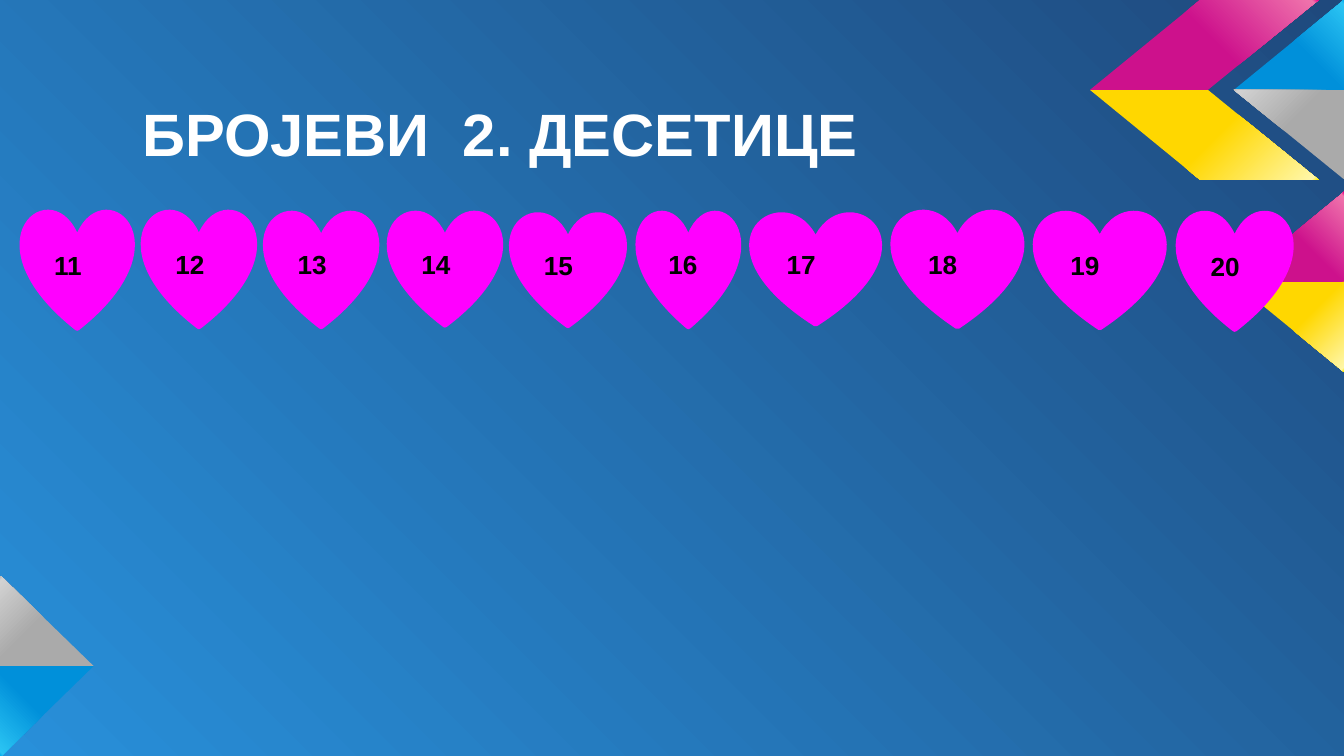
from lxml.etree import SubElement as Sub
from pptx import Presentation
from pptx.dml.color import RGBColor
from pptx.enum.shapes import MSO_SHAPE as Kind
from pptx.enum.text import MSO_ANCHOR as Anchor, PP_ALIGN as Align
from pptx.oxml.ns import qn
from pptx.util import Cm, Pt

WHITE = RGBColor(0xFF, 0xFF, 0xFF)
BLACK = RGBColor(0x00, 0x00, 0x00)
PINK = RGBColor(0xFF, 0x00, 0xFF)
SKY = RGBColor(0x28, 0x90, 0xDA)
NAVY = RGBColor(0x1F, 0x49, 0x7D)

# Base, light and end colour of each ribbon
BLUE = (RGBColor(0x00, 0x90, 0xDA), RGBColor(0x2B, 0xC4, 0xF3), RGBColor(0x00, 0xAE, 0xEE))
GREY = (RGBColor(0xAA, 0xAA, 0xAA), RGBColor(0xD2, 0xD2, 0xD2), RGBColor(0xB9, 0xB9, 0xB9))
ROSE = (RGBColor(0xCD, 0x11, 0x8C), RGBColor(0xF0, 0x74, 0xAC), RGBColor(0xEB, 0x00, 0x8B))
GOLD = (RGBColor(0xFF, 0xD7, 0x00), RGBColor(0xFF, 0xF7, 0xA9), RGBColor(0xFF, 0xF1, 0x00))

WIDE, HIGH = 25.4, 14.29

# Colours, angle, corners in cm
RIBBONS = [
    (BLUE, 135, [(1.77, 12.59), (0, 12.59), (0, HIGH), (0.03, HIGH)]),
    (GREY, 225, [(1.77, 12.59), (0.03, 10.9), (0, 10.9), (0, 12.59)]),
    (BLUE, 315, [(WIDE, 0), (23.32, 1.7), (WIDE, 1.7)]),
    (GREY, 225, [(23.32, 1.7), (WIDE, 3.39), (WIDE, 1.7)]),
    (ROSE, 315, [(22.83, 1.7), (24.92, 0), (22.68, 0), (20.6, 1.7)]),
    (ROSE, 315, [(WIDE, 3.63), (23.32, 5.33), (WIDE, 5.33)]),
    (GOLD, 45, [(23.32, 5.33), (WIDE, 7.03), (WIDE, 5.33)]),
    (GOLD, 45, [(22.83, 1.7), (24.92, 3.4), (22.68, 3.4), (20.6, 1.7)]),
]

# Left, top, width, height in cm, for the numbers from 11 on
HEARTS = [
    (0.43, 3.99, 2.06, 2.21),
    (2.72, 3.99, 2.08, 2.18),
    (5.03, 4.01, 2.08, 2.16),
    (7.37, 4.01, 2.08, 2.13),
    (9.68, 4.04, 2.11, 2.11),
    (12.07, 4.01, 1.88, 2.16),
    (14.22, 4.04, 2.39, 2.08),
    (16.89, 3.99, 2.41, 2.18),
    (19.58, 4.01, 2.41, 2.18),
    (22.28, 4.01, 2.11, 2.21),
]


def blend(props, stops):
    """Swap the solid fill in props for a gradient and return it."""
    old = props.find(qn("a:solidFill"))
    grad = props.makeelement(qn("a:gradFill"), {"rotWithShape": "1"})
    props.replace(old, grad)
    group = Sub(grad, qn("a:gsLst"))
    for place, tone in stops:
        stop = Sub(group, qn("a:gs"), pos=str(place * 1000))
        Sub(stop, qn("a:srgbClr"), val=str(tone))
    return grad


def paint_back(slide):
    fill = slide.background.fill
    fill.solid()
    fill.fore_color.rgb = SKY
    props = slide.element.find(".//" + qn("p:bgPr"))
    grad = blend(props, [(0, SKY), (100, NAVY)])
    way = Sub(grad, qn("a:path"), path="circle")
    Sub(way, qn("a:fillToRect"), t="100000", r="100000")


def add_ribbon(slide, tones, angle, spots):
    first, *rest = [(Cm(x), Cm(y)) for x, y in spots]
    pen = slide.shapes.build_freeform(*first)
    pen.add_line_segments(rest, close=True)
    shape = pen.convert_to_shape()
    shape.shadow.inherit = False
    shape.line.fill.background()
    shape.fill.solid()
    base, light, end = tones
    stops = [(0, base), (54, base), (98, light), (100, end)]
    grad = blend(shape.element.spPr, stops)
    Sub(grad, qn("a:lin"), ang=str(angle * 60000), scaled="0")


def add_text(frame, text, size, tone):
    para = frame.paragraphs[0]
    para.alignment = Align.LEFT
    run = para.add_run()
    run.text = text
    font = run.font
    font.name, font.size, font.bold = "Arial", Pt(size), True
    font.color.rgb = tone


def set_inset(frame, left=0.25, top=0.25):
    frame.margin_left, frame.margin_top = Cm(left), Cm(top)
    frame.margin_right = frame.margin_bottom = Cm(0.25)
    frame.word_wrap = True


def add_title(slide):
    box = slide.shapes.add_textbox(Cm(0.3), Cm(0.41), Cm(24.23), Cm(12.22))
    set_inset(box.text_frame, 2.39, 1.73)
    add_text(box.text_frame, "БРОЈЕВИ  2. ДЕСЕТИЦЕ", 32, WHITE)


def add_heart(slide, number, area):
    heart = slide.shapes.add_shape(Kind.HEART, *map(Cm, area))
    heart.shadow.inherit = False
    heart.fill.solid()
    heart.fill.fore_color.rgb = PINK
    heart.line.color.rgb = PINK
    heart.line.width = Pt(3)
    frame = heart.text_frame
    set_inset(frame)
    frame.vertical_anchor = Anchor.MIDDLE
    add_text(frame, str(number), 14, BLACK)


def main():
    deck = Presentation()
    deck.slide_width, deck.slide_height = Cm(WIDE), Cm(HIGH)
    slide = deck.slides.add_slide(deck.slide_layouts[6])
    paint_back(slide)
    for ribbon in RIBBONS:
        add_ribbon(slide, *ribbon)
    add_title(slide)
    for number, area in reversed(list(enumerate(HEARTS, 11))):
        add_heart(slide, number, area)
    deck.save("out.pptx")


if __name__ == "__main__":
    main()
